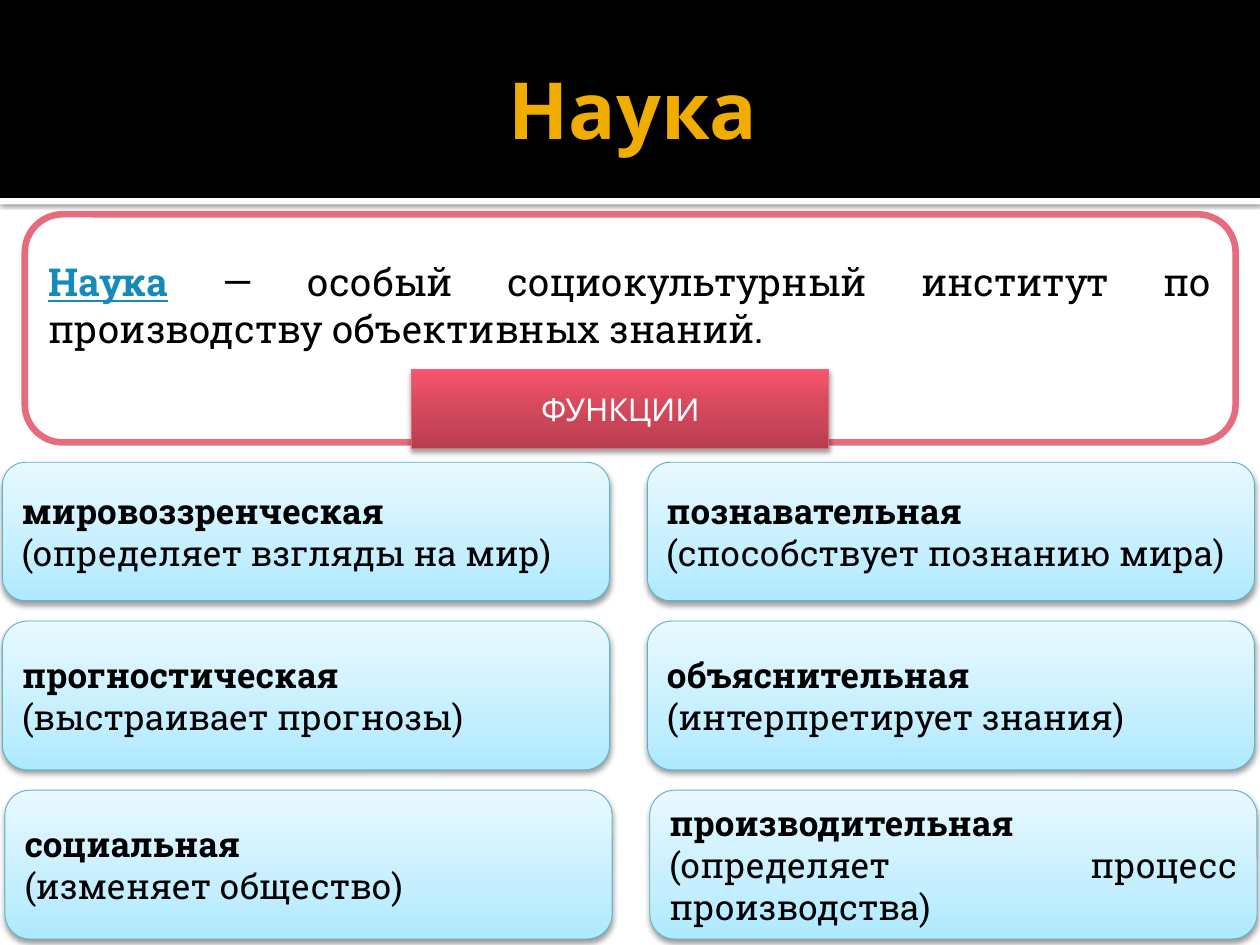
from copy import deepcopy
from dataclasses import dataclass

from lxml import etree
from pptx import Presentation
from pptx import util as u
from pptx.dml.color import RGBColor
from pptx.enum import shapes, text
from pptx.oxml.ns import qn


@dataclass(frozen=True)
class Theme:
    heading_font: str = "Cabin"
    body_font: str = "Roboto Slab"
    black: str = "000000"
    white: str = "FFFFFF"
    gold: str = "F0AD00"
    term: str = "168BBA"
    frame: str = "E66C7D"
    label_line: str = "E46778"
    card_line: str = "5BB3CA"
    label_stops: tuple = ((0, "B73E4F"), (0.55, "D7495D"), (1, "FA556C"))
    card_stops: tuple = ((0, "ADE9FF"), (0.35, "C5EFFF"), (1, "E9F9FF"))
    title_size: int = 45
    definition_size: int = 22
    card_size: int = 20
    label_size: int = 18


class SlideBuilder:
    def __init__(self, slide, theme):
        self.slide = slide
        self.theme = theme

    def shape(self, kind, place, line=None, line_width=0.5):
        box = self.slide.shapes.add_shape(kind, *map(u.Cm, place))
        box.shadow.inherit = False
        if line:
            box.line.color.rgb = RGBColor.from_string(line)
            box.line.width = u.Pt(line_width)
        else:
            box.line.fill.background()
        box.text_frame.word_wrap = True
        box.text_frame.vertical_anchor = text.MSO_ANCHOR.MIDDLE
        return box

    def solid(self, box, color):
        box.fill.solid()
        box.fill.fore_color.rgb = RGBColor.from_string(color)

    def gradient(self, box, stops):
        """Fill from bottom to top with the given (position, colour) stops."""
        box.fill.gradient()
        box.fill.gradient_angle = 90
        stop_list = box._element.spPr.find(qn("a:gradFill")).find(qn("a:gsLst"))
        while len(stop_list) < len(stops):
            stop_list.append(deepcopy(stop_list[0]))
        for stop, (position, color) in zip(box.fill.gradient_stops, stops):
            stop.position = position
            stop.color.rgb = RGBColor.from_string(color)

    def shadow(self, box, opacity, blur, distance):
        """Cast a black shadow downwards; opacity in percent, lengths in points."""
        effects = box._element.spPr.find(qn("a:effectLst"))
        outer = etree.SubElement(
            effects, qn("a:outerShdw"), blurRad=str(u.Pt(blur)),
            dist=str(u.Pt(distance)), dir="5400000", algn="ctr", rotWithShape="0")
        color = etree.SubElement(outer, qn("a:srgbClr"), val=self.theme.black)
        etree.SubElement(color, qn("a:alpha"), val=str(opacity * 1000))

    def style(self, para, font, size, color, align, bold=False):
        para.alignment = align
        para.font.name = font
        para.font.size = u.Pt(size)
        para.font.bold = bold
        para.font.color.rgb = RGBColor.from_string(color)

    def header(self, words):
        """Draw the header bands and set the title in front of them."""
        theme = self.theme
        rule = self.shape(shapes.MSO_SHAPE.RECTANGLE, (0, 3.99, 25.4, 0.13))
        self.solid(rule, theme.white)
        self.shadow(rule, 60, 2.5, 0.8)
        band = self.shape(shapes.MSO_SHAPE.RECTANGLE, (0, 0, 25.4, 3.99))
        self.solid(band, theme.black)

        title = self.slide.shapes.title
        self.slide.shapes._spTree.append(title._element)
        title.left, title.top, title.width, title.height = map(
            u.Cm, (1.27, 0.43, 22.86, 3.48))
        frame = title.text_frame
        frame.text = words
        frame.auto_size = text.MSO_AUTO_SIZE.NONE
        frame.vertical_anchor = text.MSO_ANCHOR.MIDDLE
        frame.margin_left = u.Cm(0.25)
        frame.margin_right = frame.margin_top = frame.margin_bottom = u.Cm(0.13)
        self.style(frame.paragraphs[0], theme.heading_font, theme.title_size,
                   theme.gold, text.PP_ALIGN.CENTER, bold=True)

    def definition(self, place, term, meaning):
        theme = self.theme
        box = self.shape(shapes.MSO_SHAPE.ROUNDED_RECTANGLE, place, theme.frame, 3.78)
        self.solid(box, theme.white)
        box.text_frame.margin_bottom = u.Cm(1.08)  # room for the label
        para = box.text_frame.paragraphs[0]
        self.style(para, theme.body_font, theme.definition_size,
                   theme.black, text.PP_ALIGN.JUSTIFY)
        span = para.add_run()
        span.text = term
        span.font.bold = span.font.underline = True
        span.font.color.rgb = RGBColor.from_string(theme.term)
        para.add_run().text = meaning

    def label(self, place, words):
        theme = self.theme
        box = self.shape(shapes.MSO_SHAPE.RECTANGLE, place, theme.label_line)
        self.gradient(box, theme.label_stops)
        self.shadow(box, 38, 3.1, 2)
        box.text_frame.text = words
        self.style(box.text_frame.paragraphs[0], theme.heading_font,
                   theme.label_size, theme.white, text.PP_ALIGN.CENTER)

    def card(self, place, name, detail):
        theme = self.theme
        box = self.shape(shapes.MSO_SHAPE.ROUNDED_RECTANGLE, place, theme.card_line)
        self.gradient(box, theme.card_stops)
        self.shadow(box, 38, 3.5, 2)
        box.text_frame.text = f"{name}\n({detail})"
        for para, bold in zip(box.text_frame.paragraphs, (True, False)):
            self.style(para, theme.body_font, theme.card_size, theme.black,
                       text.PP_ALIGN.JUSTIFY, bold)


# Left, top and height of each row, then its two functions of science
ROWS = (
    (0.05, 9.32, 2.79, (("мировоззренческая", "определяет взгляды на мир"),
                        ("познавательная", "способствует познанию мира"))),
    (0.05, 12.52, 3, (("прогностическая", "выстраивает прогнозы"),
                      ("объяснительная", "интерпретирует знания"))),
    (0.1, 15.93, 3, (("социальная", "изменяет общество"),
                     ("производительная", "определяет процесс производства"))),
)
CARD_WIDTH = 12.24
COLUMN_STEP = 13


def main():
    deck = Presentation()
    deck.slide_width, deck.slide_height = u.Cm(25.4), u.Cm(19.05)
    page = SlideBuilder(deck.slides.add_slide(deck.slide_layouts[5]), Theme())

    page.header("Наука")
    page.definition((0.5, 4.32, 24.41, 4.6), "Наука",
                    " — особый социокультурный институт по производству объективных знаний.")
    page.label((8.3, 7.44, 8.41, 1.6), "ФУНКЦИИ")
    for left, top, height, functions in ROWS:
        for column, (name, detail) in enumerate(functions):
            page.card((left + column * COLUMN_STEP, top, CARD_WIDTH, height), name, detail)

    deck.save("out.pptx")


if __name__ == "__main__":
    main()
